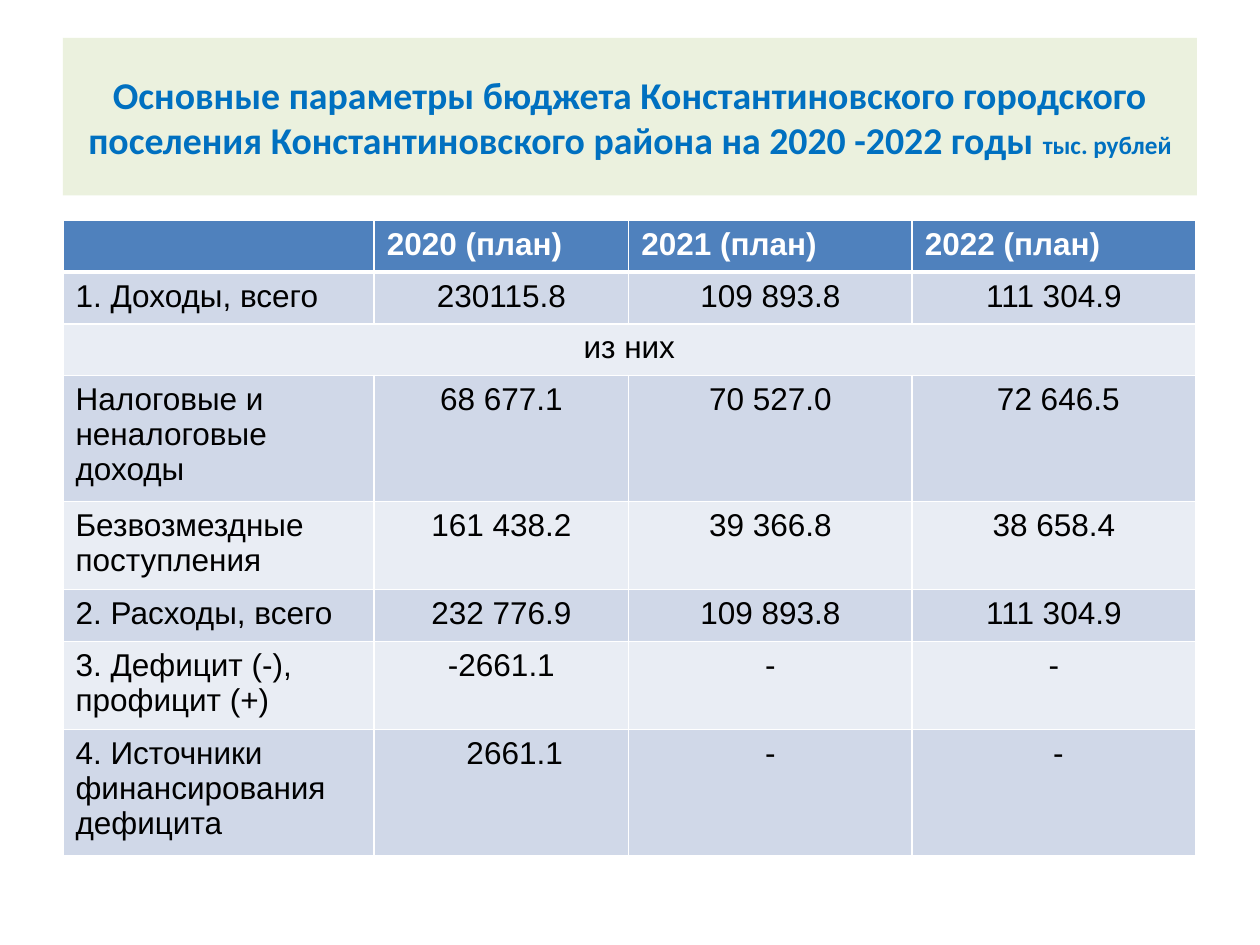
from lxml.etree import SubElement
from pptx import Presentation
from pptx.dml.color import RGBColor
from pptx.enum.shapes import MSO_SHAPE
from pptx.enum.text import MSO_ANCHOR, PP_ALIGN
from pptx.oxml.ns import qn
from pptx.util import Inches, Pt

COLORS = {
    "title_fill": "EBF1DE",
    "title_text": "0070C0",
    "header": "4F81BD",
    "band_dark": "D0D8E8",
    "band_light": "E9EDF4",
    "white": "FFFFFF",
    "black": "000000",
}
COLUMN_WIDTHS = [2.47, 2.02, 2.25, 2.25]
BUDGET_ROWS = [
    (0.41, ["", "2020 (план)", "2021 (план)", "2022 (план)"]),
    (0.41, ["1. Доходы, всего", "230115.8", "109 893.8", "111 304.9"]),
    (0.41, ["из них"]),
    (1.0, ["Налоговые и неналоговые доходы", "68 677.1", "70 527.0", "72 646.5"]),
    (0.7, ["Безвозмездные поступления", "161 438.2", "39 366.8", "38 658.4"]),
    (0.41, ["2. Расходы, всего", "232 776.9", "109 893.8", "111 304.9"]),
    (0.7, ["3. Дефицит (-), профицит (+)", "-2661.1", "-", "-"]),
    (1.0, ["4. Источники финансирования дефицита", "2661.1", "-", "-"]),
]
# Extra left inset of the values set slightly off centre: (row, column) -> inches
VALUE_INDENTS = {(3, 3): 0.07, (7, 1): 0.21, (7, 3): 0.07}


def rgb(name):
    return RGBColor.from_string(COLORS[name])


def add_run(paragraph, text, font, size, color, bold):
    run = paragraph.add_run()
    run.text = text
    run.font.name = font
    run.font.size = Pt(size)
    run.font.bold = bold
    run.font.color.rgb = rgb(color)


def set_borders(cell, bottom_width):
    properties = cell._tc.get_or_add_tcPr()
    widths = {"a:lnL": 1, "a:lnR": 1, "a:lnT": 1, "a:lnB": bottom_width}
    for position, (tag, width) in enumerate(widths.items()):
        line = SubElement(properties, qn(tag), w=str(Pt(width)))
        fill = SubElement(line, qn("a:solidFill"))
        SubElement(fill, qn("a:srgbClr"), val=COLORS["white"])
        properties.insert(position, line)  # borders come before the fill


def add_title(slide, left, top, width, height):
    shape = slide.shapes.add_shape(MSO_SHAPE.RECTANGLE, left, top, width, height)
    shape.shadow.inherit = False
    shape.fill.solid()
    shape.fill.fore_color.rgb = rgb("title_fill")
    shape.line.fill.background()
    frame = shape.text_frame
    frame.word_wrap = True
    frame.vertical_anchor = MSO_ANCHOR.MIDDLE
    paragraph = frame.paragraphs[0]
    paragraph.alignment = PP_ALIGN.CENTER
    title = ("Основные параметры бюджета Константиновского городского поселения "
             "Константиновского района на 2020 -2022 годы ")
    add_run(paragraph, title, "Calibri", 21.6, "title_text", True)
    add_run(paragraph, "тыс. рублей", "Calibri", 14.4, "title_text", True)


def style_cell(cell, row, is_header):
    band = "band_dark" if row % 2 else "band_light"
    cell.fill.solid()
    cell.fill.fore_color.rgb = rgb("header" if is_header else band)
    cell.margin_left = cell.margin_right = Inches(0.1)
    cell.margin_top = cell.margin_bottom = Inches(0.05)
    set_borders(cell, 3 if is_header else 1)


def add_budget_table(slide, left, top, width, height):
    table = slide.shapes.add_table(
        len(BUDGET_ROWS), len(COLUMN_WIDTHS), left, top, width, height).table
    for column, column_width in zip(table.columns, COLUMN_WIDTHS):
        column.width = Inches(column_width)

    for row, (row_height, texts) in enumerate(BUDGET_ROWS):
        table.rows[row].height = Inches(row_height)
        is_header = row == 0
        for column in range(len(COLUMN_WIDTHS)):
            style_cell(table.cell(row, column), row, is_header)
        is_spanning = len(texts) == 1
        if is_spanning:
            table.cell(row, 0).merge(table.cell(row, len(COLUMN_WIDTHS) - 1))

        for column, text in enumerate(texts):
            if not text:
                continue
            cell = table.cell(row, column)
            cell.margin_left = Inches(0.1 + VALUE_INDENTS.get((row, column), 0))
            paragraph = cell.text_frame.paragraphs[0]
            if is_spanning or (column and not is_header):
                paragraph.alignment = PP_ALIGN.CENTER
            add_run(paragraph, text, "Arial", 18,
                    "white" if is_header else "black", is_header)


def main():
    presentation = Presentation()
    presentation.slide_width = Inches(10)
    presentation.slide_height = Inches(7.5)
    slide = presentation.slides.add_slide(presentation.slide_layouts[6])
    add_title(slide, Inches(0.5), Inches(0.3), Inches(9), Inches(1.25))
    add_budget_table(slide, Inches(0.5), Inches(1.75), Inches(8.99), Inches(5.02))
    presentation.save("out.pptx")


if __name__ == "__main__":
    main()
